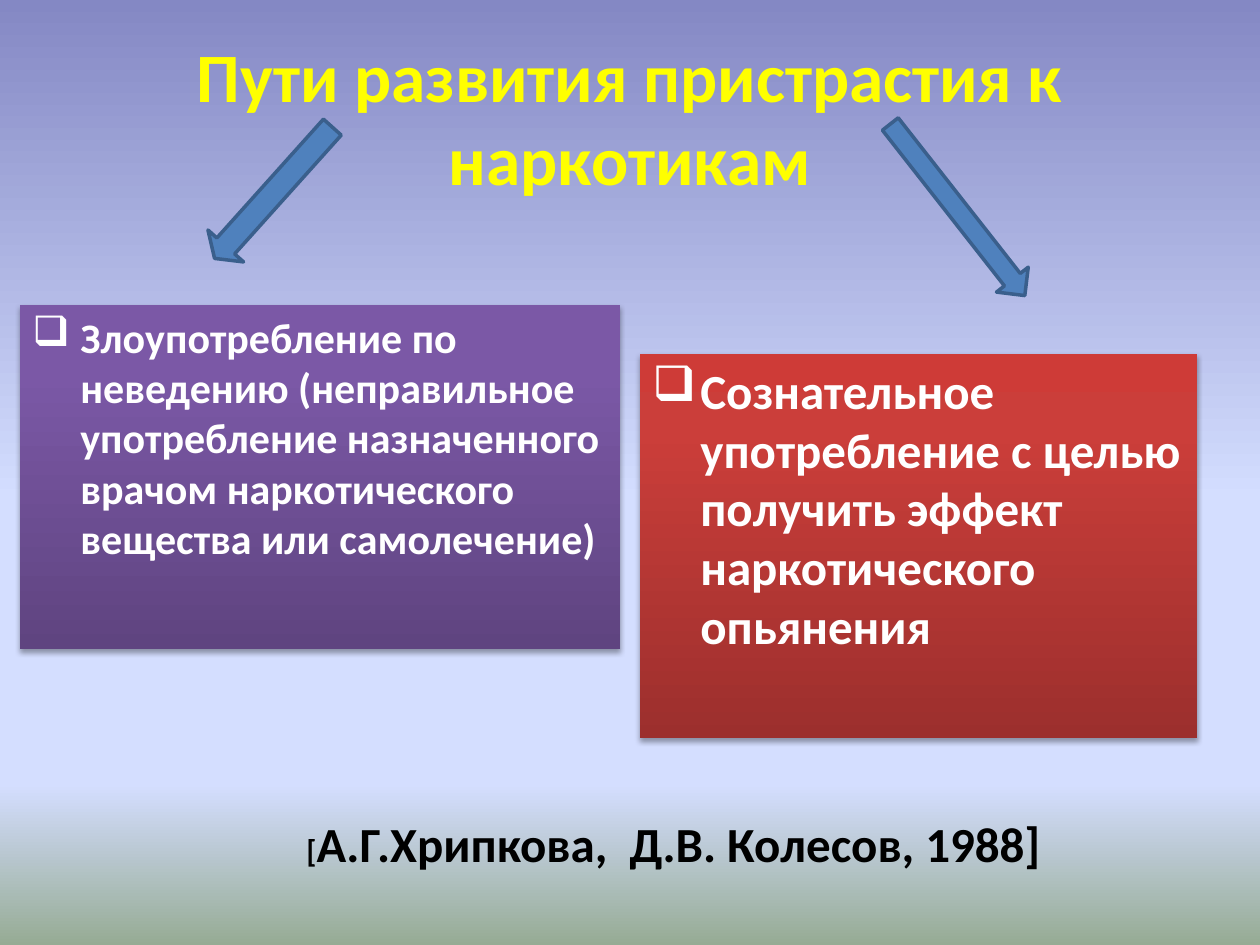
"""Build a slide on the two ways an addiction to narcotics develops."""
from lxml import etree
from pptx import Presentation
from pptx.dml.color import RGBColor
from pptx.enum.shapes import MSO_SHAPE
from pptx.enum.text import MSO_ANCHOR, MSO_AUTO_SIZE, PP_ALIGN
from pptx.oxml.ns import qn
from pptx.util import Inches, Pt

RECT, ARROW = MSO_SHAPE.RECTANGLE, MSO_SHAPE.DOWN_ARROW
LEFT, CENTER = PP_ALIGN.LEFT, PP_ALIGN.CENTER
TOP, MIDDLE = MSO_ANCHOR.TOP, MSO_ANCHOR.MIDDLE
THEME = {
    "font": "Calibri",
    "title": "FFFF00", "light": "FFFFFF", "dark": "000000",
    "arrow": "4F81BD", "arrow_line": "3A5F8C",
    "sky": [(0, "8488C4"), (53, "D4DEFF"), (83, "D4DEFF"), (100, "96AB94")],
    "purple": [(0, "5F4480"), (80, "7B58A6"), (100, "7C57A8")],
    "red": [(0, "9C2F2D"), (80, "CB3E3A"), (100, "CE3B37")],
    "title_size": 39.6, "large": 28, "medium": 24, "small": 18,
}


def write(p, text, size, color, align=LEFT):
    p.alignment = align
    r = p.add_run()
    r.text = text
    r.font.name, r.font.size, r.font.bold = THEME["font"], Pt(size), True
    r.font.color.rgb = RGBColor.from_string(color)


def shade(fill, element, stops, angle):
    fill.gradient()
    fill.gradient_angle = angle
    gs_list = next(element.iter(qn("a:gsLst")))
    for gs in list(gs_list):
        gs_list.remove(gs)
    for percent, color in stops:
        gs = etree.SubElement(gs_list, qn("a:gs"), pos=str(percent * 1000))
        etree.SubElement(gs, qn("a:srgbClr"), val=color)


prs = Presentation()
prs.slide_width, prs.slide_height = Inches(10), Inches(7.5)
UNIT = prs.slide_width / 100
s = prs.slides.add_slide(prs.slide_layouts[5])
shade(s.background.fill, s.element, THEME["sky"], 270)

title = s.shapes.title
title.left, title.top, title.width, title.height = [round(v * UNIT) for v in (5, 3, 90, 12.5)]
tf = title.text_frame
tf.word_wrap, tf.auto_size, tf.vertical_anchor = True, MSO_AUTO_SIZE.NONE, MIDDLE
write(tf.paragraphs[0], "Пути развития пристрастия к наркотикам",
      size=THEME["title_size"], color=THEME["title"], align=CENTER)

panels = [
    ((1.6, 24.2, 47.6, 27.3), "purple", "medium",
     "Злоупотребление по неведению (неправильное употребление назначенного "
     "врачом наркотического вещества или самолечение)"),
    ((50.8, 28.1, 44.2, 30.5), "red", "large",
     "Сознательное употребление с целью получить эффект наркотического опьянения"),
]
for at, stops, size, text in panels:
    sp = s.shapes.add_shape(RECT, *[round(v * UNIT) for v in at])
    shade(sp.fill, sp.element, THEME[stops], 90)
    sp.line.fill.background()
    sp.shadow.inherit = False
    shadow = etree.SubElement(next(sp.element.iter(qn("a:effectLst"))), qn("a:outerShdw"),
                              blurRad=str(Pt(3.1)), dist=str(Pt(1.8)),
                              dir="5400000", rotWithShape="0")
    black = etree.SubElement(shadow, qn("a:srgbClr"), val=THEME["dark"])
    etree.SubElement(black, qn("a:alpha"), val="35000")
    tf = sp.text_frame
    tf.word_wrap, tf.vertical_anchor = True, TOP
    p = tf.paragraphs[0]
    pPr = p._p.get_or_add_pPr()
    pPr.set("marL", str(Inches(0.38)))
    pPr.set("indent", str(-Inches(0.38)))
    etree.SubElement(pPr, qn("a:buChar"), char="❑")
    write(p, text, size=THEME[size], color=THEME["light"])

arrows = [
    ((19.8, 8.3, 3.8, 14), 41.9, 0.35),
    ((74.4, 8, 3.2, 17.3), 321.9, 0.5),
]
for at, rotation, head in arrows:
    sp = s.shapes.add_shape(ARROW, *[round(v * UNIT) for v in at])
    sp.rotation = rotation
    sp.adjustments[0], sp.adjustments[1] = 0.5, head
    sp.shadow.inherit = False
    sp.fill.solid()
    sp.fill.fore_color.rgb = RGBColor.from_string(THEME["arrow"])
    sp.line.color.rgb = RGBColor.from_string(THEME["arrow_line"])
    sp.line.width = Pt(2)

source = s.shapes.add_textbox(*[round(v * UNIT) for v in (14.8, 64.1, 77.3, 5.7)])
tf = source.text_frame
tf.word_wrap, tf.auto_size = True, MSO_AUTO_SIZE.SHAPE_TO_FIT_TEXT
for text, size in (("[", "small"), ("А.Г.Хрипкова,  Д.В. Колесов, 1988]", "large")):
    write(tf.paragraphs[0], text, size=THEME[size], color=THEME["dark"], align=CENTER)

prs.save("out.pptx")
